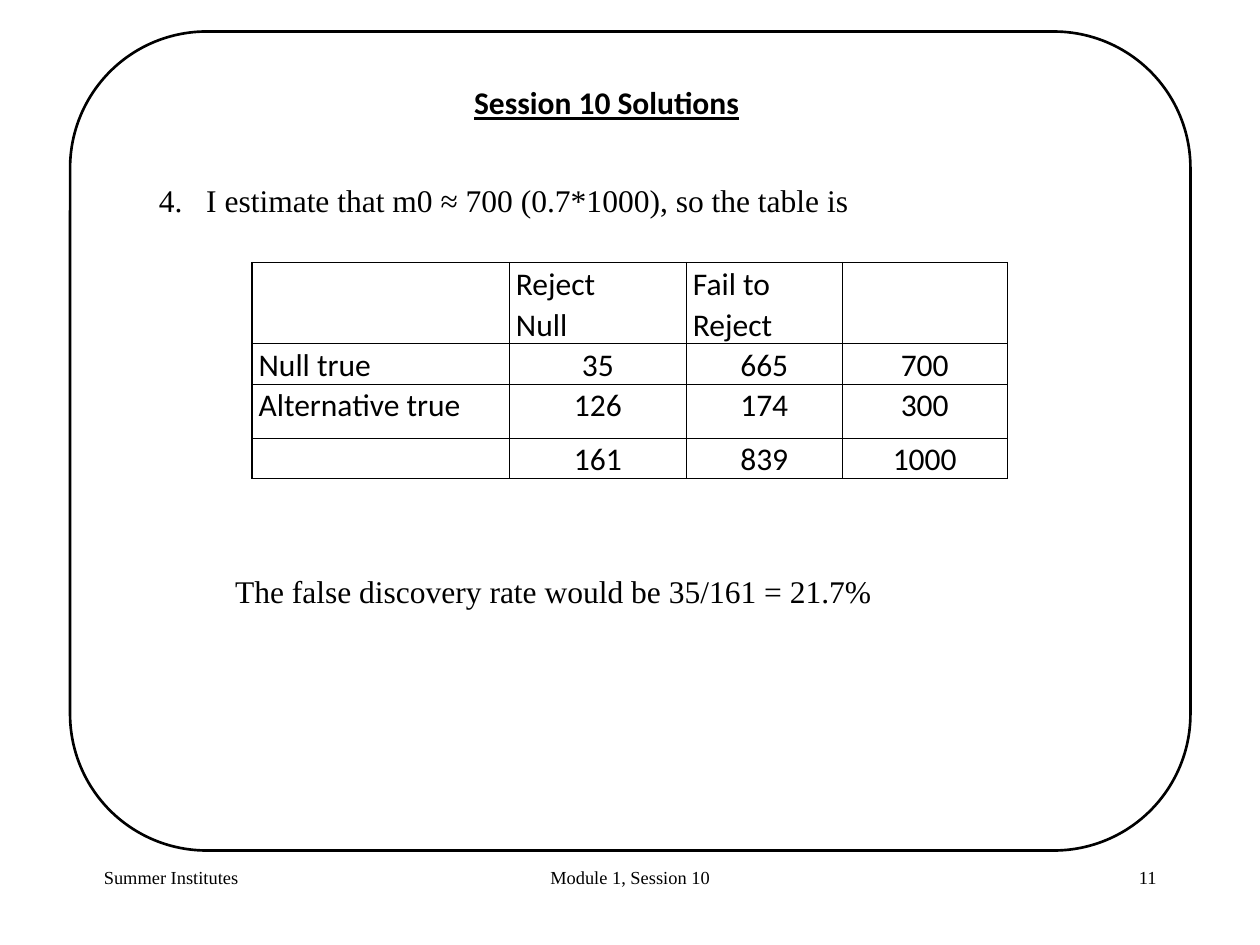
"""Build the Session 10 solutions slide on a 48 by 36 grid."""
from lxml.etree import SubElement
from pptx import Presentation
from pptx.dml.color import RGBColor as RGB
from pptx.enum.shapes import MSO_SHAPE as Kind
from pptx.enum.text import PP_ALIGN as Align
from pptx.oxml import parse_xml
from pptx.oxml.ns import nsdecls, qn
from pptx.util import Inches, Pt

HUES = {"ink": "000000", "page": "FFFFFF"}
SERIF, SANS = "Times New Roman", "Calibri"
SMALL = {"name": SERIF, "size": Pt(14)}
BODY = {"name": SERIF, "size": Pt(24)}
CELL = {"name": SANS, "size": Pt(24)}
TITLE = {**CELL, "bold": True, "underline": True}
LEFT, MID, RIGHT = ({"alignment": a} for a in (Align.LEFT, Align.CENTER, Align.RIGHT))
LOOSE = {"line_spacing": 1.07, "space_after": Pt(8)}
ITEM = {**LEFT, **LOOSE, "space_before": Pt(12)}

FRAME = (2.67, 1.2, 42.67, 31.2)
TEXTS = [
    ("Summer Institutes", (3.6, 32.8, 10, 2.4), SMALL, LEFT),
    ("Module 1, Session 10", (16.4, 32.8, 15.2, 2.4), SMALL, MID),
    ("11", (34.4, 32.8, 10, 2.4), SMALL, RIGHT),
    ("Session 10 Solutions", (11.1, 3, 24, 1.8), TITLE, MID),
    ("The false discovery rate would be 35/161 = 21.7%", (8.6, 21.6, 30, 1.8), BODY, LEFT),
]
STEP = ("I estimate that m0 ≈ 700 (0.7*1000), so the table is", (5.7, 6.6, 31.5, 1.84), BODY, ITEM)
START = 4
ROWS = [
    ("", "Reject\nNull", "Fail to\nReject", ""),
    ("Null true", "35", "665", "700"),
    ("Alternative true", "126", "174", "300"),
    ("", "161", "839", "1000"),
]
WIDE = (9.8, 6.74, 5.94, 6.28)
HIGH = (3.1, 1.12, 2.05, 1.33)
SPOT = (9.6, 10)

deck = Presentation()
deck.slide_width, deck.slide_height = Inches(13.33), Inches(10)
UNIT = deck.slide_height / 36
slide = deck.slides.add_slide(deck.slide_layouts[6])


def grid(*nums):
    return [round(n * UNIT) for n in nums]


def style(obj, fmt):
    for key, val in fmt.items():
        setattr(obj, key, val)


def write(body, text, font, para):
    body.text = text
    for par in body.paragraphs:
        style(par, para)
        for run in par.runs:
            style(run.font, font)
            run.font.color.rgb = RGB.from_string(HUES["ink"])


def label(text, box, font, para):
    body = slide.shapes.add_textbox(*grid(*box)).text_frame
    body.word_wrap = True
    write(body, text, font, para)
    return body


def number(par, start):
    props = par._p.get_or_add_pPr()
    props.set("marL", str(Inches(0.5)))
    props.set("indent", str(-Inches(0.5)))
    SubElement(props, qn("a:buFont"), typeface="+mj-lt")
    SubElement(props, qn("a:buAutoNum"), type="arabicPeriod", startAt=str(start))


def edge(cell):
    props = cell._tc.get_or_add_tcPr()
    for spot, side in enumerate("LRTB"):
        props.insert(spot, parse_xml(
            f'<a:ln{side} {nsdecls("a")} w="{Pt(1)}"><a:solidFill>'
            f'<a:srgbClr val="{HUES["ink"]}"/></a:solidFill></a:ln{side}>'))


def table():
    size = grid(*SPOT, sum(WIDE), sum(HIGH))
    tab = slide.shapes.add_table(len(ROWS), len(WIDE), *size).table
    tab.first_row = tab.horz_banding = False
    for col, wide in zip(tab.columns, grid(*WIDE)):
        col.width = wide
    for row, high in zip(tab.rows, grid(*HIGH)):
        row.height = high
    pad = {"margin_left": Inches(0.07), "margin_right": Inches(0.07),
           "margin_top": 0, "margin_bottom": 0}
    for r, row in enumerate(ROWS):
        for c, text in enumerate(row):
            cell = tab.cell(r, c)
            style(cell, pad)
            cell.fill.background()
            edge(cell)
            para = {**MID, **LOOSE} if r and c else {**LEFT, **LOOSE}
            if not r:
                para["space_after"] = Pt(0)
            write(cell.text_frame, text, CELL, para)


def main():
    back = slide.background.fill
    back.solid()
    back.fore_color.rgb = RGB.from_string(HUES["page"])
    frame = slide.shapes.add_shape(Kind.ROUNDED_RECTANGLE, *grid(*FRAME))
    frame.shadow.inherit = False
    frame.fill.background()
    frame.line.color.rgb = RGB.from_string(HUES["ink"])
    frame.line.width = Pt(2)
    for text in TEXTS:
        label(*text)
    number(label(*STEP).paragraphs[0], START)
    table()
    deck.save("out.pptx")


if __name__ == "__main__":
    main()
